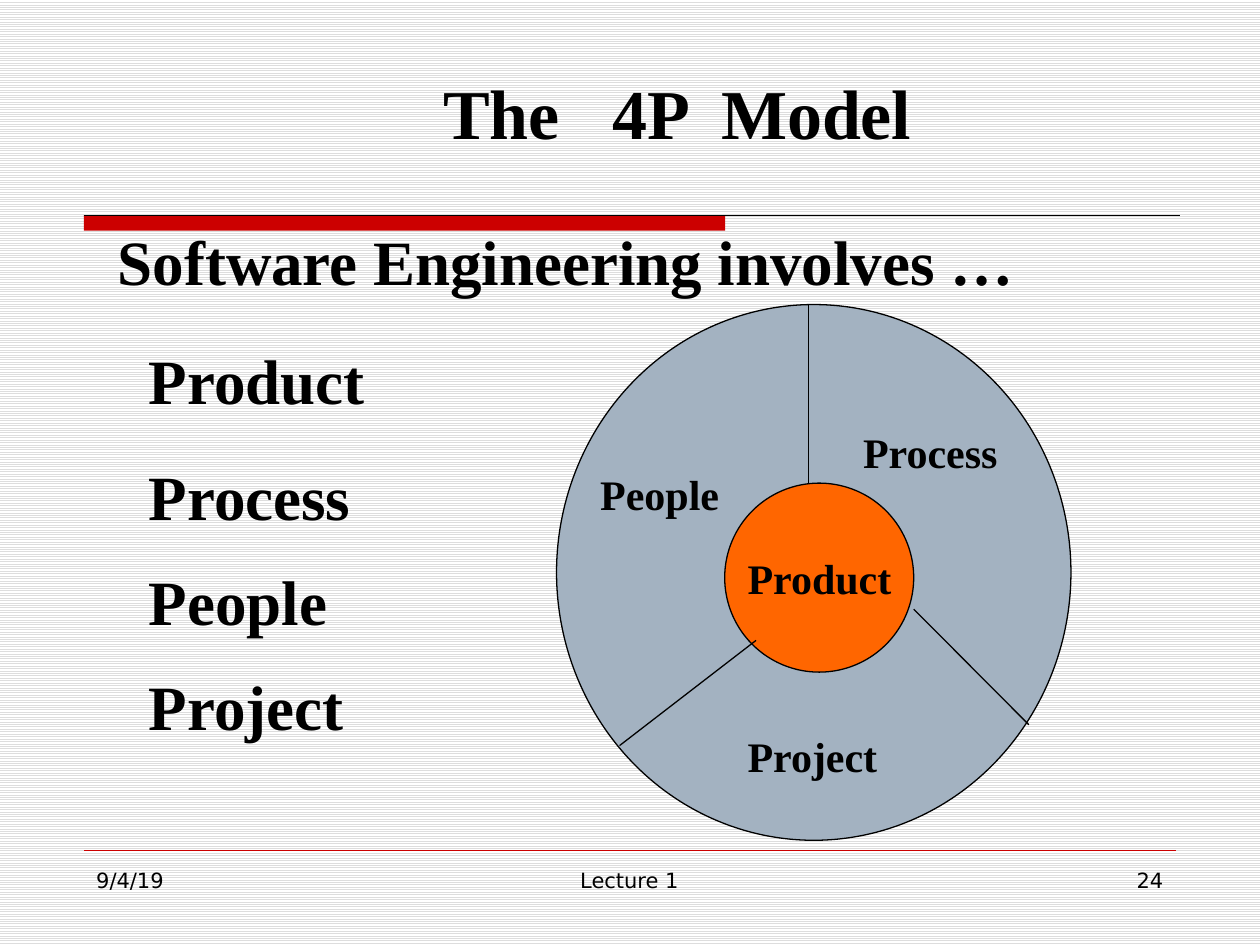
from lxml.etree import SubElement
from pptx import Presentation
from pptx.dml.color import RGBColor
from pptx.enum.dml import MSO_PATTERN
from pptx.enum.shapes import MSO_CONNECTOR, MSO_SHAPE
from pptx.enum.text import PP_ALIGN
from pptx.oxml.ns import qn
from pptx.util import Cm, Pt

COLORS = {"ink": "000000", "red": "CC0000", "ring": "A3B2C1",
          "hub": "FF6600", "stripe": "DDDDDD", "paper": "FFFFFF"}
SERIF, SANS = "Times New Roman", "DejaVu Sans"


def color(name):
    """Return the named colour."""
    return RGBColor.from_string(COLORS[name])


def add_text(s, box, text, size, align=PP_ALIGN.LEFT, font=SERIF):
    """Add one line of text; serif lines are bold with space before."""
    tf = s.shapes.add_textbox(*map(Cm, box)).text_frame
    tf.word_wrap = True
    p = tf.paragraphs[0]
    p.alignment = align
    r = p.add_run()
    r.text = text
    for key, value in {"size": Pt(size), "name": font, "bold": font == SERIF}.items():
        setattr(r.font, key, value)
    r.font.color.rgb = color("ink")
    if font == SERIF:
        before = SubElement(p._p.get_or_add_pPr(), qn("a:spcBef"))
        SubElement(before, qn("a:spcPct"), val="50000")


def add_shape(s, kind, box, fill, line=None):
    """Add a filled preset shape with an optional outline."""
    sp = s.shapes.add_shape(kind, *map(Cm, box))
    sp.shadow.inherit = False
    sp.fill.solid()
    sp.fill.fore_color.rgb = color(fill)
    if line:
        sp.line.color.rgb = color(line)
        sp.line.width = Pt(0.75)
    else:
        sp.line.fill.background()


def add_line(s, start, end, line="ink", width=0.75):
    """Add a straight line without shadow."""
    c = s.shapes.add_connector(MSO_CONNECTOR.STRAIGHT, *map(Cm, (*start, *end)))
    c.line.color.rgb = color(line)
    c.line.width = Pt(width)
    SubElement(c._element.spPr, qn("a:effectLst"))


def add_rule(s, x, y, w):
    """Add the heading rule with its thick red part."""
    add_shape(s, MSO_SHAPE.RECTANGLE, (x, y, 12.93, 0.31), "red")
    add_line(s, (x, y), (x + w, y))


def add_footer(s, x, y, w):
    """Add the footer line with date, title and page number."""
    add_line(s, (x, y), (x + w, y), "red", 0.25)
    for dx, width, text, align in (
        (0, 5.5, "9/4/19", PP_ALIGN.LEFT),
        (6.98, 8.04, "Lecture 1", PP_ALIGN.CENTER),
        (w - 5.5, 5.5, "24", PP_ALIGN.RIGHT),
    ):
        add_text(s, (x + dx, y + 0.21, width, 1.32), text, 12, align, SANS)


def add_list(s, x, y, w):
    """Add the column of the four P words."""
    for dy, text in ((0, "Product"), (2.33, "Process"), (4.45, "People"), (6.57, "Project")):
        add_text(s, (x, y + dy, w, 1.78), text, 36)


def add_wheel(s, x, y, w, h):
    """Add the ring with its hub, dividers and labels."""
    add_shape(s, MSO_SHAPE.OVAL, (x, y, w, h), "ring", "ink")
    add_shape(s, MSO_SHAPE.OVAL, (x + 3.39, y + 3.6, 3.81, 3.81), "hub", "ink")
    for x1, y1, x2, y2 in ((5.08, 0, 5.08, 3.6), (4.02, 6.77, 1.27, 8.89),
                           (7.2, 6.14, 9.52, 8.47)):
        add_line(s, (x + x1, y + y1), (x + x2, y + y2))
    for dx, dy, text in ((3.6, 4.87, "Product"), (0.63, 3.17, "People"),
                         (5.93, 2.33, "Process"), (3.6, 8.47, "Project")):
        add_text(s, (x + dx, y + dy, 4.1, 1.27), text, 24)


def main():
    """Build the slide and save it."""
    prs = Presentation()
    prs.slide_width, prs.slide_height = Cm(25.4), Cm(19.05)
    s = prs.slides.add_slide(prs.slide_layouts[6])
    fill = s.background.fill
    fill.patterned()
    fill.pattern = MSO_PATTERN.LIGHT_HORIZONTAL
    fill.fore_color.rgb = color("stripe")
    fill.back_color.rgb = color("paper")
    add_rule(s, 1.69, 4.34, 22.1)
    add_footer(s, 1.69, 17.15, 22.01)
    add_text(s, (3.39, 1.27, 20.53, 1.95), "The   4P  Model", 40, PP_ALIGN.CENTER)
    add_text(s, (2.12, 4.37, 21.38, 1.78), "Software Engineering involves …", 36)
    add_list(s, 2.75, 6.77, 9)
    add_wheel(s, 11.22, 6.14, 10.37, 10.8)
    prs.save("out.pptx")


if __name__ == "__main__":
    main()
